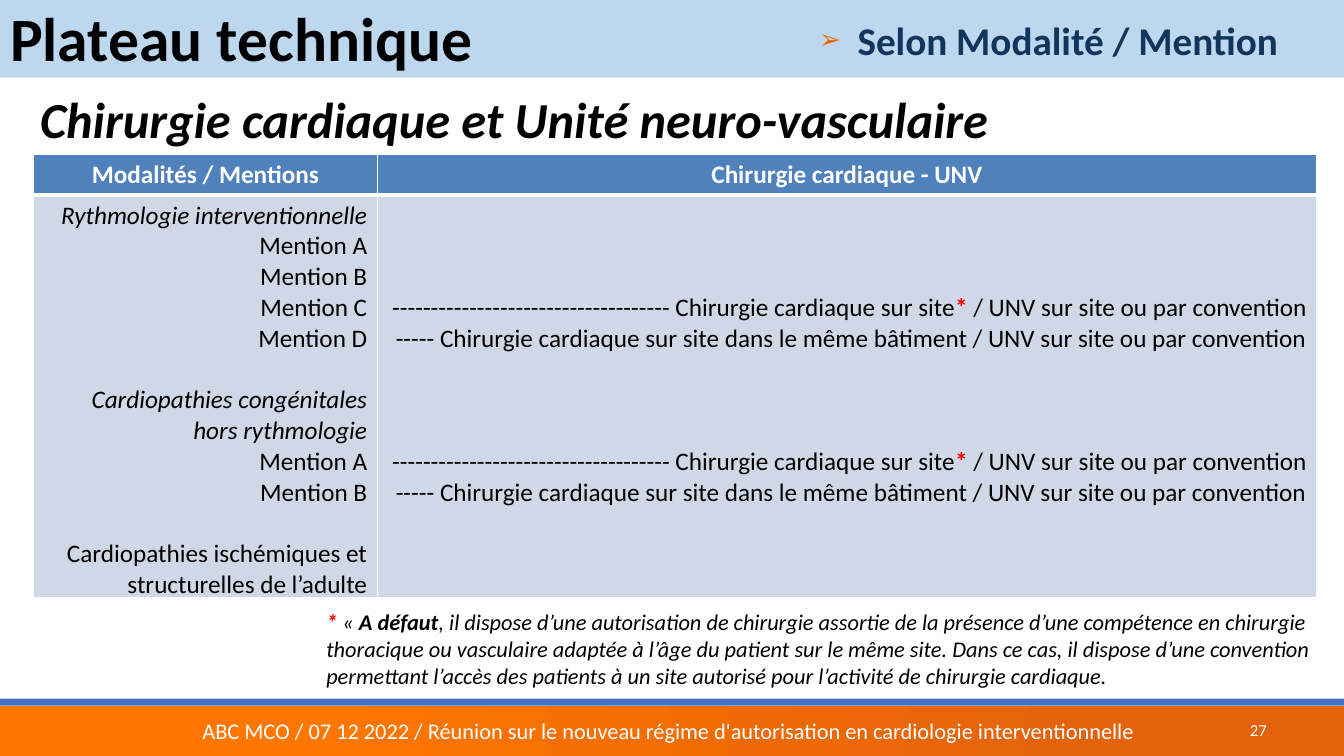
from pptx import Presentation
from pptx import util as u
from pptx.dml import color
from pptx.enum import shapes, text
from pptx.oxml import parse_xml
from pptx.oxml.ns import nsdecls

Pt = u.Pt
LEFT, MID, RIGHT = text.PP_ALIGN.LEFT, text.PP_ALIGN.CENTER, text.PP_ALIGN.RIGHT


def rgb(code):
    return color.RGBColor.from_string(code)


def write(para, runs, size, align=LEFT):
    para.alignment = align
    for words, tint, bold, italic in runs:
        run = para.add_run()
        run.text = words
        font = run.font
        font.name, font.size = "Calibri", Pt(size)
        font.bold, font.italic = bold, italic
        font.color.rgb = rgb(tint)


deck = Presentation()
deck.slide_width, deck.slide_height = Pt(960), Pt(540)
slide = deck.slides.add_slide(deck.slide_layouts[1])
tree = slide.shapes

bars = [
    (shapes.MSO_SHAPE.ROUNDED_RECTANGLE, 0, 504, 960, 36, None),
    (shapes.MSO_SHAPE.RECTANGLE, 0, 499, 960, 5, "4472C4"),
    (shapes.MSO_SHAPE.RECTANGLE, -1, -0.5, 961, 56, "BDD7EE"),
]
for kind, x, y, w, h, tint in bars:
    bar = tree.add_shape(kind, Pt(x), Pt(y), Pt(w), Pt(h))
    bar.shadow.inherit = False
    bar.line.fill.background()
    if tint:
        bar.fill.solid()
        bar.fill.fore_color.rgb = rgb(tint)
    else:
        bar.adjustments[0] = 0.02
        bar.fill.gradient()
        bar.fill.gradient_angle = 0
        stops = zip(bar.fill.gradient_stops, [(0.23, "FF7600"), (0.81, "E4620C")])
        for stop, (spot, shade) in stops:
            stop.position = spot
            stop.color.rgb = rgb(shade)

title, body = tree.title, tree.placeholders[1]
for holder, x, y, w, h in [(title, 0, -0.5, 884, 54), (body, 412, 8, 508, 42)]:
    holder.left, holder.top, holder.width, holder.height = Pt(x), Pt(y), Pt(w), Pt(h)
    holder.text_frame.auto_size = text.MSO_AUTO_SIZE.NONE
    tree._spTree.append(holder._element)
title.text_frame.vertical_anchor = text.MSO_ANCHOR.MIDDLE
write(title.text_frame.paragraphs[0], [("Plateau technique", "000000", True, False)], 44)

topic = body.text_frame.paragraphs[0]
topic.space_before = Pt(0)
write(topic, [("Selon Modalité / Mention", "12355D", True, False)], 28, RIGHT)
props = topic._p.get_or_add_pPr()
props.set("marL", str(Pt(50)))
props.set("indent", str(Pt(-27)))
for mark in ('<a:buClr {}><a:srgbClr val="E96A00"/></a:buClr>',
             '<a:buSzPct {} val="65000"/>', '<a:buChar {} char="➢"/>'):
    props.append(parse_xml(mark.format(nsdecls("a"))))

note = [
    [("* ", "FF0000", True, True), ("« ", "000000", False, True),
     ("A défaut", "000000", True, True),
     (", il dispose d’une autorisation de chirurgie assortie de la présence "
      "d’une compétence en chirurgie", "000000", False, True)],
    [("thoracique ou vasculaire adaptée à l’âge du patient sur le même site. "
      "Dans ce cas, il dispose d’une convention", "000000", False, True)],
    [("permettant l’accès des patients à un site autorisé pour l’activité "
      "de chirurgie cardiaque.", "000000", False, True)],
]
head = [[("Chirurgie cardiaque et Unité neuro-vasculaire", "000000", True, True)]]
foot = [[("ABC MCO / 07 12 2022 / Réunion sur le nouveau régime d'autorisation "
          "en cardiologie interventionnelle", "FFFFFF", False, False)]]
page = [[("27", "FFFFFF", False, False)]]
boxes = [
    (head, 21.5, 59, 746, 51, 36, LEFT, True),
    (note, 226, 430, 734, 67, 16, LEFT, False),
    (foot, 137.5, 507.5, 690, 28, 16, LEFT, True),
    (page, 797, 511.5, 115, 20, 12, RIGHT, True),
]
for lines, x, y, w, h, size, align, wrap in boxes:
    frame = tree.add_textbox(Pt(x), Pt(y), Pt(w), Pt(h)).text_frame
    frame.word_wrap = wrap
    frame.vertical_anchor = text.MSO_ANCHOR.MIDDLE
    for i, runs in enumerate(lines):
        para = frame.paragraphs[0] if i == 0 else frame.add_paragraph()
        write(para, runs, size, align)

STEP = 22
site = [("-" * 36 + " Chirurgie cardiaque sur site", "000000", False, False),
        ("*", "FF0000", True, False),
        (" / UNV sur site ou par convention", "000000", False, False)]
same = [("----- Chirurgie cardiaque sur site dans le même bâtiment / "
         "UNV sur site ou par convention", "000000", False, False)]
modes = [
    ("Rythmologie interventionnelle", True, 0),
    ("Mention A", False, 0), ("Mention B", False, 0),
    ("Mention C", False, 0), ("Mention D", False, 0),
    ("Cardiopathies congénitales hors rythmologie", True, 1),
    ("Mention A", False, 0), ("Mention B", False, 0),
    ("Cardiopathies ischémiques et structurelles de l’adulte", False, 1),
]
left = [([(words, "000000", False, slant)], gap) for words, slant, gap in modes]
right = [(site, 0), (same, 0), (site, 3), (same, 0)]
heads = [[([(words, "FFFFFF", True, False)], 0)]
         for words in ("Modalités / Mentions", "Chirurgie cardiaque - UNV")]

grid = tree.add_table(2, 2, Pt(24), Pt(110), Pt(916.5), Pt(317)).table
for col, wide in zip(grid.columns, (245.5, 671)):
    col.width = Pt(wide)
for row, tall in zip(grid.rows, (29.5, 287.5)):
    row.height = Pt(tall)
for r, row in enumerate([heads, [left, right]]):
    for c, lines in enumerate(row):
        cell = grid.cell(r, c)
        edges = {"L": 1, "R": 1, "T": 3 if r else 1, "B": 1 if r else 3}
        for side, wide in edges.items():
            cell._tc.get_or_add_tcPr().append(parse_xml(
                f'<a:ln{side} {nsdecls("a")} w="{Pt(wide)}"><a:solidFill>'
                f'<a:srgbClr val="FFFFFF"/></a:solidFill></a:ln{side}>'))
        cell.fill.solid()
        cell.fill.fore_color.rgb = rgb("D0D8E8" if r else "4F81BD")
        if r:
            cell.margin_top = Pt(3.5 + 3 * STEP * c)
            cell.margin_bottom = Pt(0)
        for i, (runs, gap) in enumerate(lines):
            frame = cell.text_frame
            para = frame.paragraphs[0] if i == 0 else frame.add_paragraph()
            para.space_before = Pt(gap * STEP)
            write(para, runs, 18, RIGHT if r else MID)

deck.save("out.pptx")
